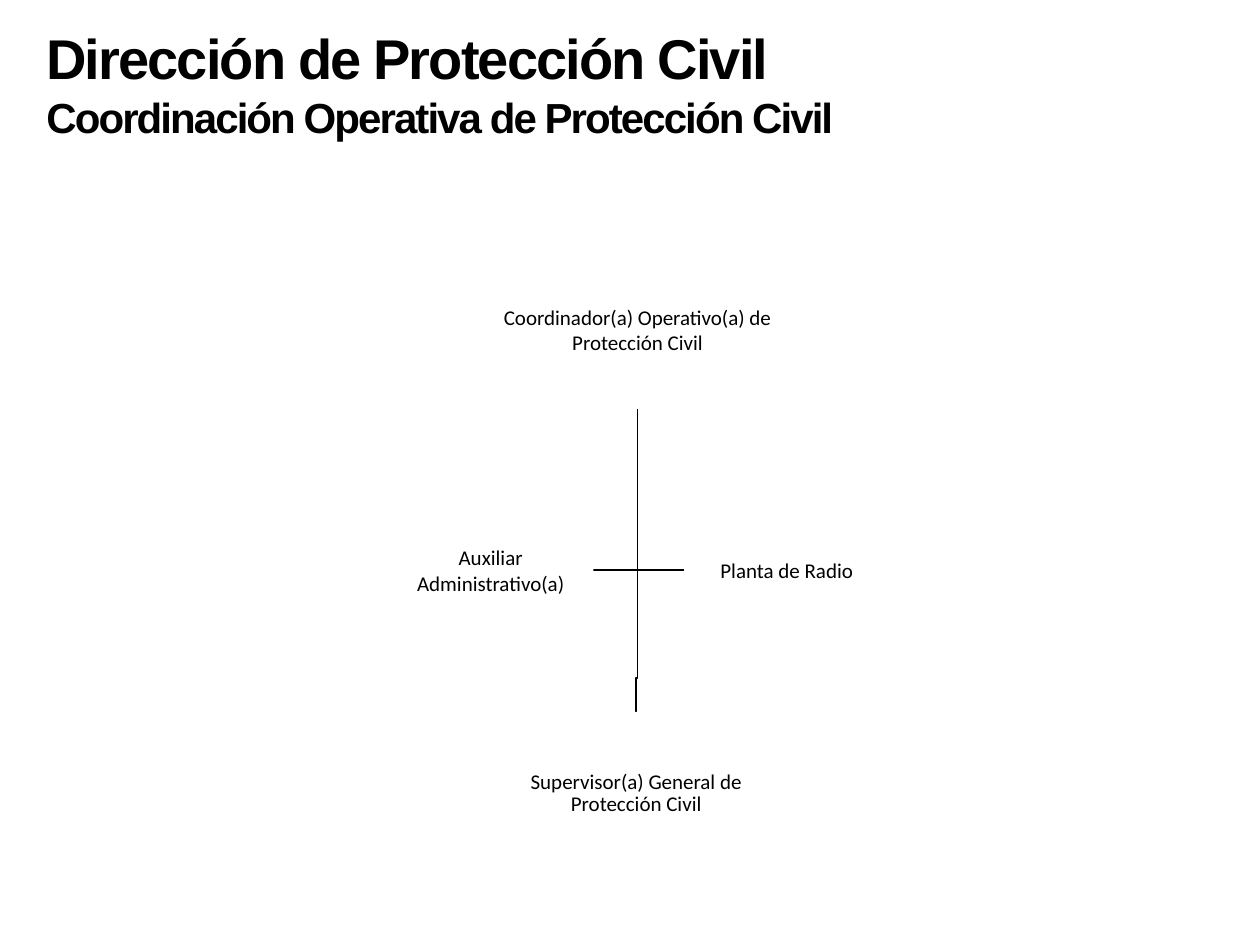
"""Builds the organisation chart slide of the civil protection coordination."""
from pptx import Presentation
from pptx.dml.color import RGBColor
from pptx.enum.shapes import MSO_SHAPE
from pptx.enum.text import MSO_ANCHOR, MSO_AUTO_SIZE, PP_ALIGN
from pptx.util import Inches, Pt

BLACK = RGBColor(0, 0, 0)
WHITE = RGBColor(255, 255, 255)

TITLES = [
    ("Dirección de Protección Civil", 32),
    ("Coordinación Operativa de Protección Civil", 24),
]
TITLE_BOX = (0.27, 0.14, 7.96, 1.04)

COORDINATOR = ("Coordinador(a) Operativo(a) de Protección Civil", (3.82, 1.98, 2.48, 1.27))
SUPERVISOR = ("Supervisor(a) General de Protección Civil", (3.97, 5.65, 2.16, 1.3))
STAFF_TEXTS = ["Auxiliar\vAdministrativo(a)", "Planta de Radio"]
STAFF_LEFT, STAFF_TOP, STAFF_WIDTH, STAFF_HEIGHT = 3.08, 4.06, 1.63, 0.93
STAFF_STEP = 2.35
BEND_HEIGHT = 5.38


def add_title(slide):
    box = slide.shapes.add_textbox(*map(Inches, TITLE_BOX))
    frame = box.text_frame
    frame.word_wrap = True
    frame.auto_size = MSO_AUTO_SIZE.SHAPE_TO_FIT_TEXT
    for index, (text, size) in enumerate(TITLES):
        paragraph = frame.add_paragraph() if index else frame.paragraphs[0]
        run = paragraph.add_run()
        run.text = text
        run.font.name = "Arial"
        run.font.size = Pt(size)
        run.font.bold = True
        run.font.color.rgb = BLACK
        run.font._element.set("spc", "-110")


def add_path(slide, points):
    start, *others = [tuple(map(Inches, point)) for point in points]
    builder = slide.shapes.build_freeform(*start)
    builder.add_line_segments(others, close=False)
    shape = builder.convert_to_shape()
    shape.shadow.inherit = False
    shape.fill.background()
    shape.line.color.rgb = BLACK
    shape.line.width = Pt(1)


def add_position(slide, text, bounds, filled=True, line_spacing=None):
    bounds = map(Inches, bounds)
    if filled:
        shape = slide.shapes.add_shape(MSO_SHAPE.RECTANGLE, *bounds)
        shape.shadow.inherit = False
        shape.fill.solid()
        shape.fill.fore_color.rgb = WHITE
        shape.line.fill.background()
    else:
        shape = slide.shapes.add_textbox(*bounds)
    frame = shape.text_frame
    frame.word_wrap = True
    frame.vertical_anchor = MSO_ANCHOR.MIDDLE
    frame.margin_left = frame.margin_right = Inches(0.01)
    frame.margin_top = frame.margin_bottom = Inches(0.01)
    paragraph = frame.paragraphs[0]
    paragraph.text = text
    paragraph.alignment = PP_ALIGN.CENTER
    paragraph.line_spacing = line_spacing
    paragraph.font.name = "Calibri"
    paragraph.font.size = Pt(12)
    paragraph.font.color.rgb = BLACK


def add_chart(slide):
    left, top, width, height = COORDINATOR[1]
    trunk, trunk_top = left + width / 2, top + height
    left, bottom, width, _ = SUPERVISOR[1]
    target = left + width / 2
    staff_middle = STAFF_TOP + STAFF_HEIGHT / 2
    staff_lefts = [STAFF_LEFT + index * STAFF_STEP for index in range(len(STAFF_TEXTS))]

    for edge in (staff_lefts[1], staff_lefts[0] + STAFF_WIDTH):
        add_path(slide, [(trunk, trunk_top), (trunk, staff_middle), (edge, staff_middle)])
    add_path(slide, [(trunk, trunk_top), (trunk, BEND_HEIGHT), (target, BEND_HEIGHT), (target, bottom)])

    add_position(slide, *COORDINATOR, filled=False)
    add_position(slide, *SUPERVISOR, line_spacing=0.9)
    for text, left in zip(STAFF_TEXTS, staff_lefts):
        add_position(slide, text, (left, STAFF_TOP, STAFF_WIDTH, STAFF_HEIGHT))


def main():
    presentation = Presentation()
    presentation.slide_width, presentation.slide_height = Inches(10), Inches(7.5)
    slide = presentation.slides.add_slide(presentation.slide_layouts[6])
    add_title(slide)
    add_chart(slide)
    presentation.save("out.pptx")


if __name__ == "__main__":
    main()
